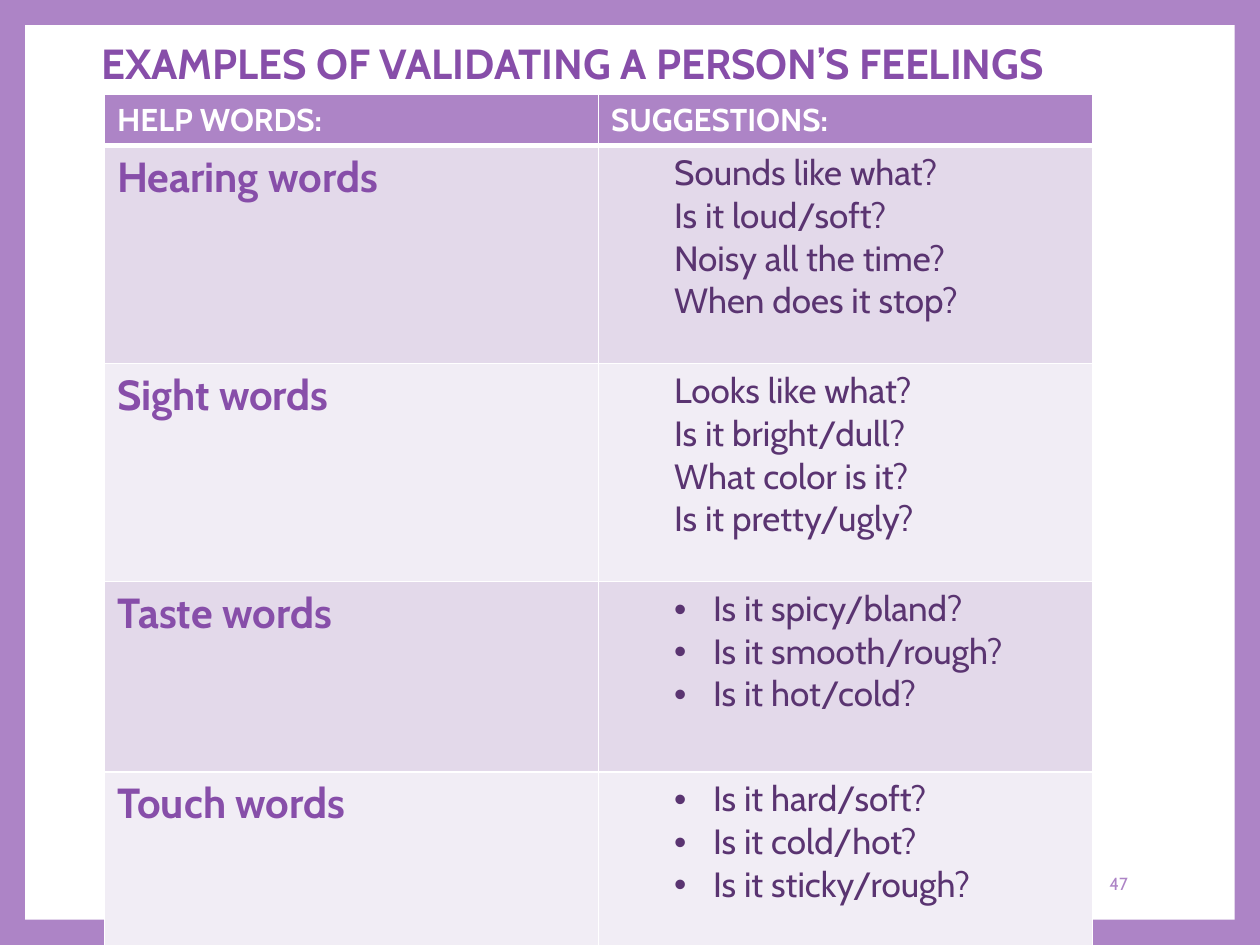
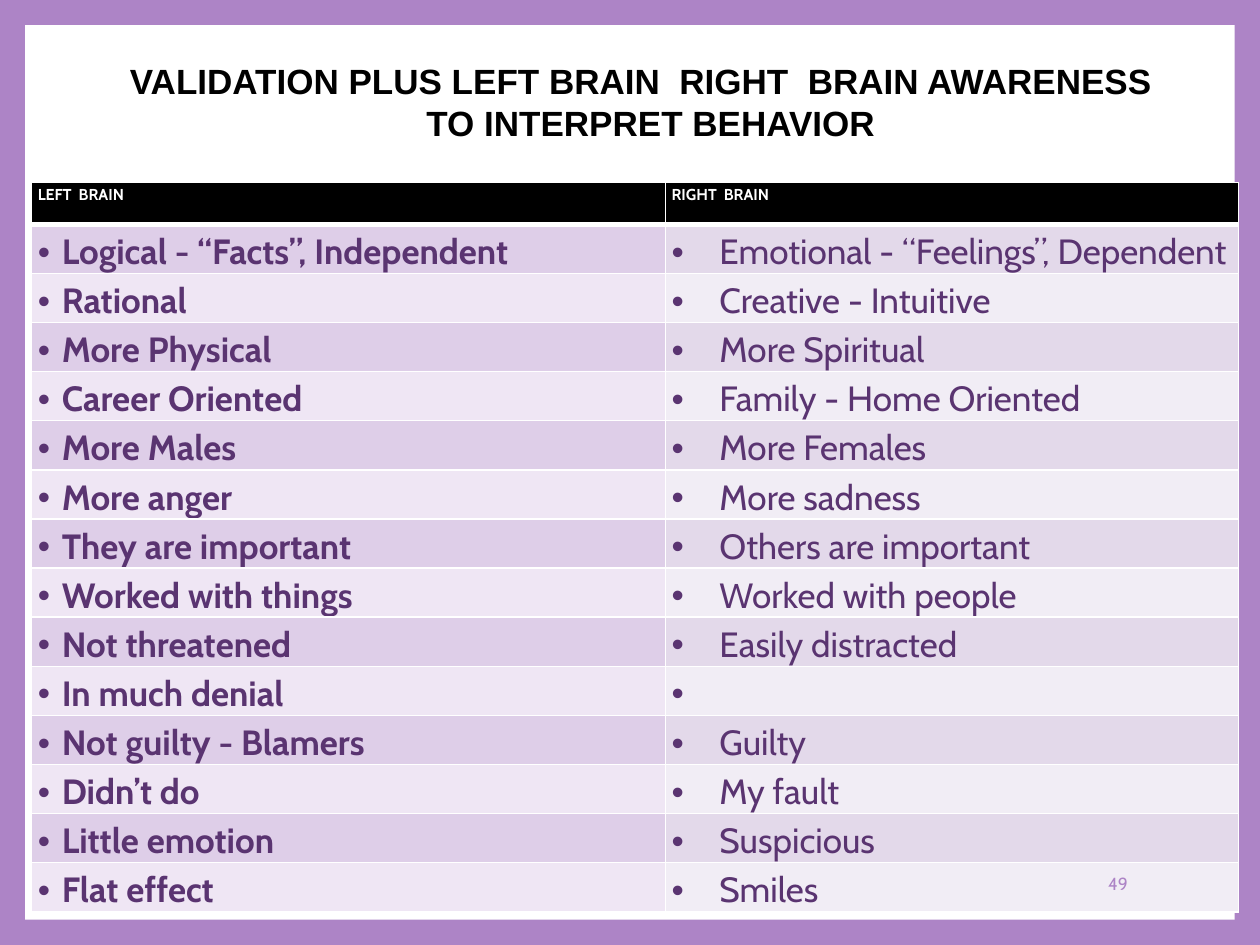
"""Build two table slides on validating feelings and left/right brain awareness."""
from dataclasses import dataclass

from lxml import etree
from pptx import Presentation
from pptx.dml.color import RGBColor
from pptx.enum.shapes import MSO_SHAPE
from pptx.enum.text import MSO_ANCHOR, PP_ALIGN
from pptx.oxml.ns import qn
from pptx.util import Inches, Pt

RECT = MSO_SHAPE.RECTANGLE
TOP, MIDDLE = MSO_ANCHOR.TOP, MSO_ANCHOR.MIDDLE
LEFT, CENTER, RIGHT = PP_ALIGN.LEFT, PP_ALIGN.CENTER, PP_ALIGN.RIGHT
JUSTIFY = PP_ALIGN.JUSTIFY


@dataclass(frozen=True)
class Theme:
    font: str = "Cabin"
    plain_font: str = "Arial"
    white: str = "FFFFFF"
    black: str = "000000"
    lilac: str = "AD84C6"
    violet: str = "874EA9"
    plum: str = "5A3471"
    bands: tuple = ("E3D9EA", "F1EDF5")
    strong_bands: tuple = ("DECEE8", "EFE6F4")
    title: int = 24
    header: int = 18
    body: int = 20
    small_header: int = 9
    number: int = 10


THEME = Theme()

HELP_WORDS = [
    ("Hearing words", False, ["Sounds like what?", "Is it loud/soft?",
                              "Noisy all the time?", "When does it stop?"]),
    ("Sight words", False, ["Looks like what?", "Is it bright/dull?",
                            "What color is it?", "Is it pretty/ugly?"]),
    ("Taste words", True, ["Is it spicy/bland?", "Is it smooth/rough?",
                           "Is it hot/cold?"]),
    ("Touch words", True, ["Is it hard/soft?", "Is it cold/hot?",
                           "Is it sticky/rough?"]),
]

BRAIN_TRAITS = [
    ("Logical - “Facts”, Independent", "Emotional - “Feelings”, Dependent"),
    ("Rational", "Creative - Intuitive"),
    ("More Physical", "More Spiritual"),
    ("Career Oriented", "Family - Home Oriented"),
    ("More Males", "More Females"),
    ("More anger", "More sadness"),
    ("They are important", "Others are important"),
    ("Worked with things", "Worked with people"),
    ("Not threatened", "Easily distracted"),
    ("In much denial", " "),
    ("Not guilty - Blamers", "Guilty"),
    ("Didn’t do", "My fault"),
    ("Little emotion", "Suspicious"),
    ("Flat effect", "Smiles"),
]


def write_text(tf, text, size, color, font=THEME.font, bold=False, align=LEFT,
               spacing=None, level=0, indent=None, bullet=False):
    lines = [text] if isinstance(text, str) else text
    for i, line in enumerate(lines):
        p = tf.paragraphs[0] if i == 0 else tf.add_paragraph()
        p.alignment, p.level = align, level
        if spacing:
            p.line_spacing = spacing
        pPr = p._p.get_or_add_pPr()
        if indent:
            pPr.set("marL", str(Inches(indent[0])))
            pPr.set("indent", str(Inches(indent[1])))
        if bullet:
            etree.SubElement(pPr, qn("a:buFont")).set("typeface", "Arial")
            etree.SubElement(pPr, qn("a:buChar")).set("char", "•")
        r = p.add_run()
        r.text = line
        r.font.name, r.font.size, r.font.bold = font, Pt(size), bold
        r.font.color.rgb = RGBColor.from_string(color)


class Deck:
    def __init__(self, theme):
        self.theme = theme
        self.prs = Presentation()
        self.prs.slide_width, self.prs.slide_height = Inches(10), Inches(7.5)
        self.slide = None

    def add_slide(self):
        self.slide = self.prs.slides.add_slide(self.prs.slide_layouts[5])

    def frame(self):
        master = self.prs.slide_master
        fill = master.background.fill
        fill.solid()
        fill.fore_color.rgb = RGBColor.from_string(self.theme.lilac)
        sp = self.slide.shapes.add_shape(
            RECT, Inches(0.2), Inches(0.2), Inches(9.6), Inches(7.1))
        sp.shadow.inherit = False
        sp.fill.solid()
        sp.fill.fore_color.rgb = RGBColor.from_string(self.theme.white)
        sp.line.fill.background()
        sp.element.nvSpPr.cNvPr.set("id", "100")
        master.shapes.element.insert(2, sp.element)

    def title(self, text, box, anchor, **fmt):
        sp = self.slide.shapes.title
        sp.left, sp.top, sp.width, sp.height = map(Inches, box)
        tf = sp.text_frame
        tf.word_wrap, tf.vertical_anchor = True, anchor
        write_text(tf, text, bold=True, align=CENTER, **fmt)

    def number(self, text):
        sp = self.slide.shapes.add_textbox(
            Inches(7.65), Inches(6.81), Inches(1.4), Inches(0.4))
        tf = sp.text_frame
        tf.word_wrap, tf.vertical_anchor = True, MIDDLE
        write_text(tf, text, self.theme.number, self.theme.lilac, align=RIGHT)

    def table(self, left, top, widths, heights):
        gf = self.slide.shapes.add_table(
            len(heights), len(widths), Inches(left), Inches(top),
            Inches(sum(widths)), Inches(sum(heights)))
        tbl = gf.table
        tbl.horz_banding = False
        for col, width in zip(tbl.columns, widths):
            col.width = Inches(width)
        for row, height in zip(tbl.rows, heights):
            row.height = Inches(height)
        return tbl

    def cell(self, tbl, row, col, text, fill, margins=None, **fmt):
        cell = tbl.cell(row, col)
        if margins:
            cell.margin_left = cell.margin_right = Inches(margins[0])
            cell.margin_top = cell.margin_bottom = Inches(margins[1])
        heavy = {0: "lnB", 1: "lnT"}.get(row)
        tcPr = cell._tc.get_or_add_tcPr()
        for side in ("lnL", "lnR", "lnT", "lnB"):
            ln = etree.SubElement(tcPr, qn(f"a:{side}"))
            ln.set("w", str(Pt(3 if side == heavy else 1)))
            solid = etree.SubElement(ln, qn("a:solidFill"))
            etree.SubElement(solid, qn("a:srgbClr")).set("val", self.theme.white)
        cell.fill.solid()
        cell.fill.fore_color.rgb = RGBColor.from_string(fill)
        write_text(cell.text_frame, text, **fmt)


def feelings_slide(deck):
    t = deck.theme
    deck.title("EXAMPLES OF VALIDATING A PERSON’S FEELINGS",
               (0.17, 0.25, 8.75, 0.5), TOP, size=t.title, color=t.violet)
    tbl = deck.table(0.83, 0.75, [3.92] * 2, [0.39, 1.73, 1.73, 1.51, 1.39])
    for col, text in enumerate(("HELP WORDS:", "SUGGESTIONS:")):
        deck.cell(tbl, 0, col, text, t.lilac, size=t.header, color=t.white,
                  bold=True)
    for row, (label, bullet, questions) in enumerate(HELP_WORDS, 1):
        fill = t.bands[(row - 1) % 2]
        deck.cell(tbl, row, 0, label, fill, size=t.title, color=t.violet,
                  bold=True)
        deck.cell(tbl, row, 1, questions, fill, size=t.body, color=t.plum,
                  level=1, bullet=bullet,
                  indent=(0.81, -0.31) if bullet else (0.5, 0))
    deck.number("47")


def brain_slide(deck):
    t = deck.theme
    deck.title(["VALIDATION PLUS LEFT BRAIN  RIGHT  BRAIN AWARENESS  ",
                "TO INTERPRET BEHAVIOR"],
               (-0.17, 0.42, 10.67, 0.77), MIDDLE, size=t.body, color=t.black,
               font=t.plain_font)
    tbl = deck.table(0.25, 1.45, [5.03, 4.55],
                     [0.33] + [0.39] * len(BRAIN_TRAITS))
    shared = dict(margins=(0.05, 0), align=JUSTIFY, spacing=1.15)
    for col, text in enumerate(("LEFT  BRAIN", "RIGHT  BRAIN")):
        deck.cell(tbl, 0, col, text, t.black, size=t.small_header,
                  color=t.white, bold=True, **shared)
    columns = ((t.strong_bands, 0.19, True), (t.bands, 0.38, False))
    for row, traits in enumerate(BRAIN_TRAITS, 1):
        for col, (bands, hang, bold) in enumerate(columns):
            deck.cell(tbl, row, col, traits[col], bands[(row - 1) % 2],
                      size=t.body, color=t.plum, bold=bold, bullet=True,
                      indent=(hang, -hang), **shared)
    deck.number("49")


def main():
    deck = Deck(THEME)
    deck.add_slide()
    deck.frame()
    feelings_slide(deck)
    deck.add_slide()
    brain_slide(deck)
    deck.prs.save("out.pptx")


if __name__ == "__main__":
    main()
